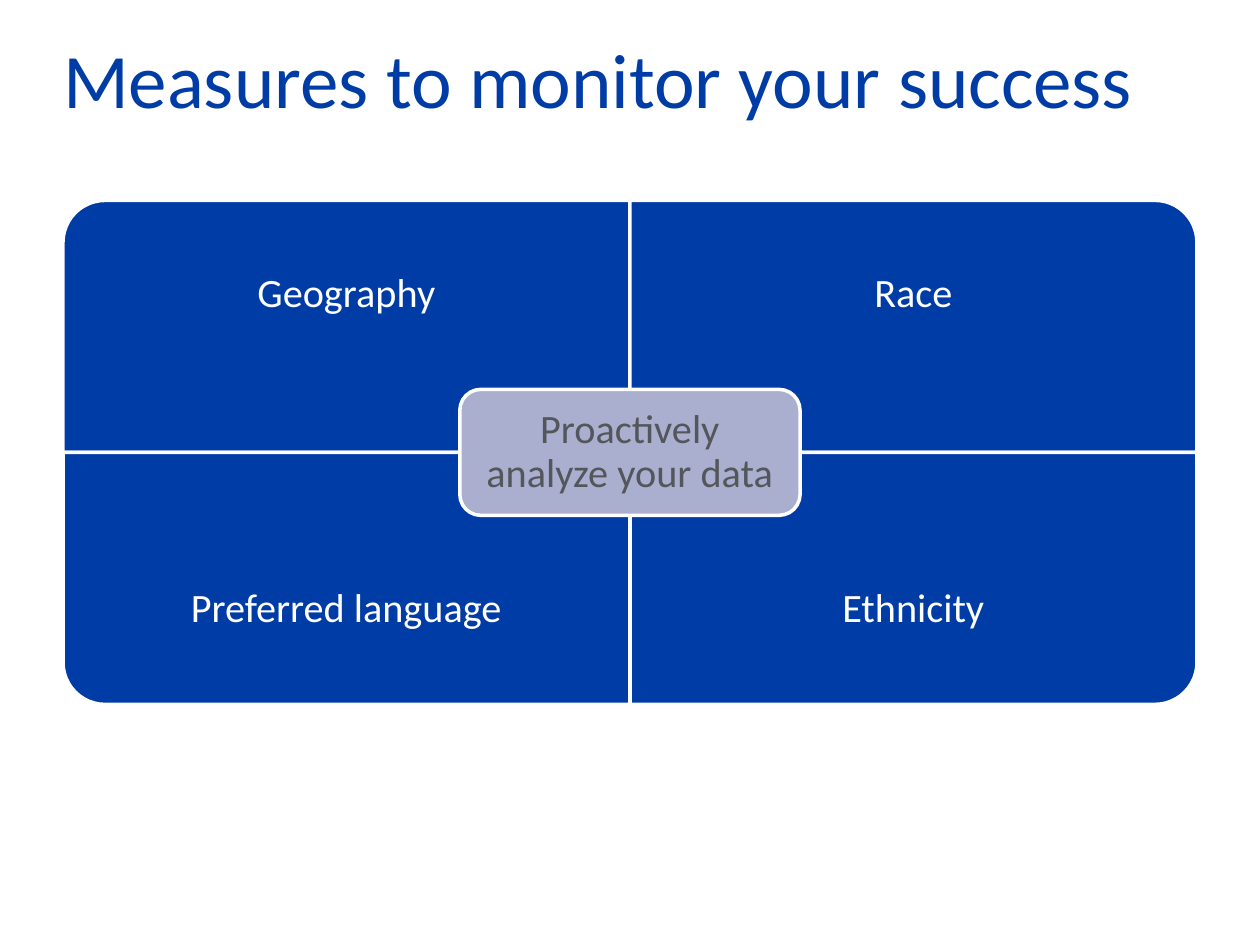
from pptx import Presentation
from pptx.dml.color import RGBColor
from pptx.enum import shapes, text
from pptx.util import Cm, Pt

TITLE = "Measures to monitor your success"
CENTER = "Proactively analyze your data"
QUADRANTS = [
    ("Geography", 0, 0, 270),
    ("Race", 1, 0, 0),
    ("Preferred language", 0, 1, 180),
    ("Ethnicity", 1, 1, 90),
]
COLORS = {"blue": "003CA5", "lilac": "ABAFCF", "white": "FFFFFF", "gray": "53565A"}
FONT = "Calibri"
LEFT, TOP = 1.27, 4.04
QUAD_W, QUAD_H, LABEL_H = 11.43, 5.08, 3.81
HUB_W, HUB_H, HUB_INSET = 6.86, 2.54, 0.12


def rgb(name):
    return RGBColor.from_string(COLORS[name])


def format_text(shape, words, size, color, align, inset):
    tf = shape.text_frame
    tf.text = words
    tf.word_wrap = True
    tf.auto_size = text.MSO_AUTO_SIZE.NONE
    tf.vertical_anchor = text.MSO_ANCHOR.MIDDLE
    tf.margin_left = tf.margin_right = tf.margin_top = tf.margin_bottom = Cm(inset)
    p = tf.paragraphs[0]
    p.alignment = align
    p.line_spacing = 0.9
    p.font.name = FONT
    p.font.size = Pt(size)
    p.font.color.rgb = rgb(color)


def add_panel(s, kind, x, y, w, h, fill, rotation=0):
    if rotation % 180:
        x, y, w, h = x + (w - h) / 2, y + (h - w) / 2, h, w
    sp = s.shapes.add_shape(kind, Cm(x), Cm(y), Cm(w), Cm(h))
    sp.rotation = rotation
    sp.shadow.inherit = False
    sp.fill.solid()
    sp.fill.fore_color.rgb = rgb(fill)
    sp.line.color.rgb = rgb("white")
    sp.line.width = Pt(2)


def add_label(s, words, x, y, w, h, color, inset):
    box = s.shapes.add_textbox(Cm(x), Cm(y), Cm(w), Cm(h))
    format_text(box, words, 23, color, text.PP_ALIGN.CENTER, inset)


def main():
    prs = Presentation()
    prs.slide_width, prs.slide_height = Cm(25.4), Cm(19.05)
    s = prs.slides.add_slide(prs.slide_layouts[5])

    title = s.shapes.title
    title.left, title.top, title.width, title.height = Cm(LEFT), Cm(0.58), Cm(22.86), Cm(2.21)
    format_text(title, TITLE, 44, "blue", text.PP_ALIGN.LEFT, 0)

    for words, col, row, rotation in QUADRANTS:
        x, y = LEFT + col * QUAD_W, TOP + row * QUAD_H
        add_panel(s, shapes.MSO_SHAPE.ROUND_1_RECTANGLE, x, y, QUAD_W, QUAD_H, "blue", rotation)
        label_y = y + row * (QUAD_H - LABEL_H)
        add_label(s, words, x, label_y, QUAD_W, LABEL_H, "white", 0.45)

    x, y = LEFT + QUAD_W - HUB_W / 2, TOP + QUAD_H - HUB_H / 2
    add_panel(s, shapes.MSO_SHAPE.ROUNDED_RECTANGLE, x, y, HUB_W, HUB_H, "lilac")
    add_label(s, CENTER, x + HUB_INSET, y + HUB_INSET,
              HUB_W - 2 * HUB_INSET, HUB_H - 2 * HUB_INSET, "gray", 0.25)

    prs.save("out.pptx")


if __name__ == "__main__":
    main()
